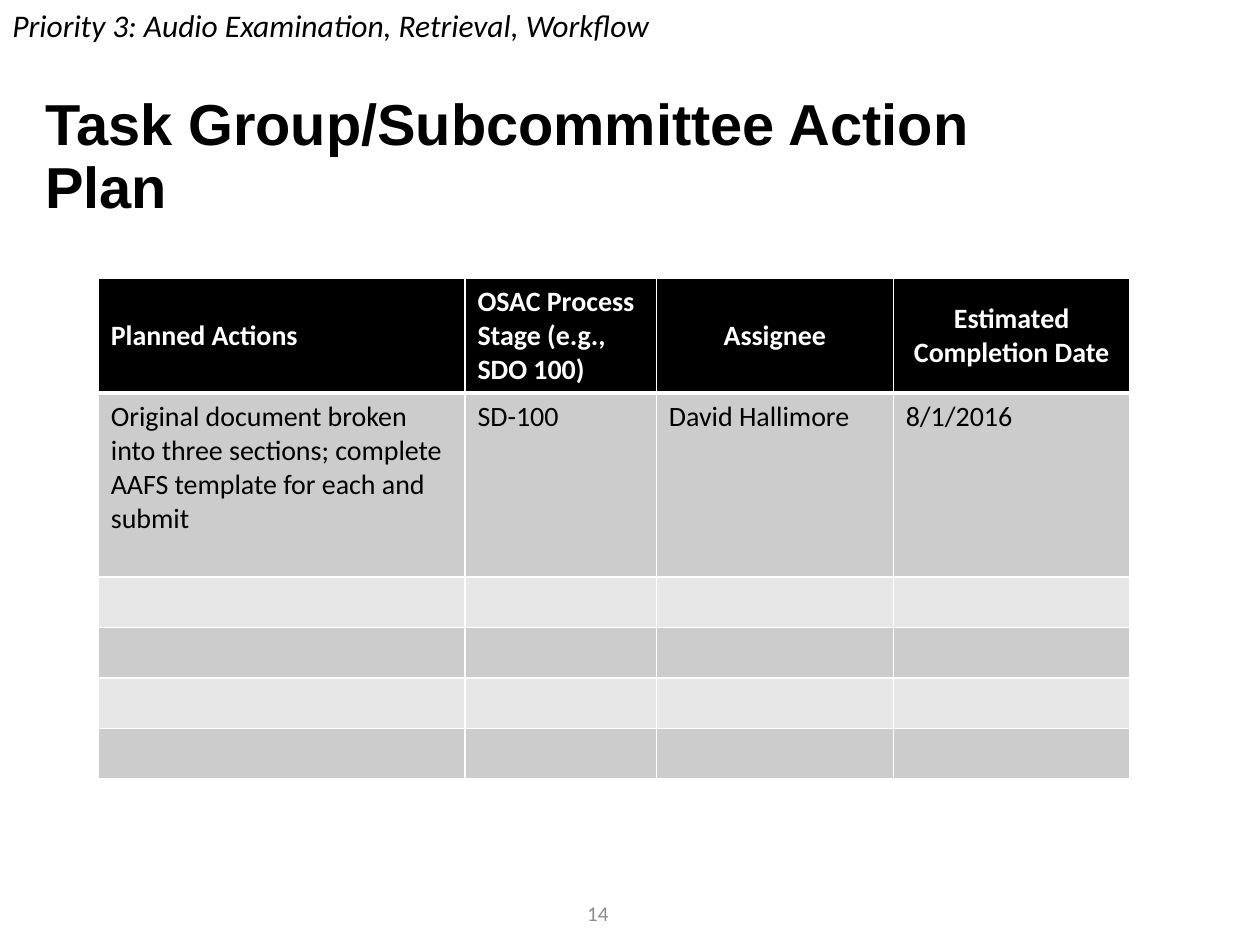
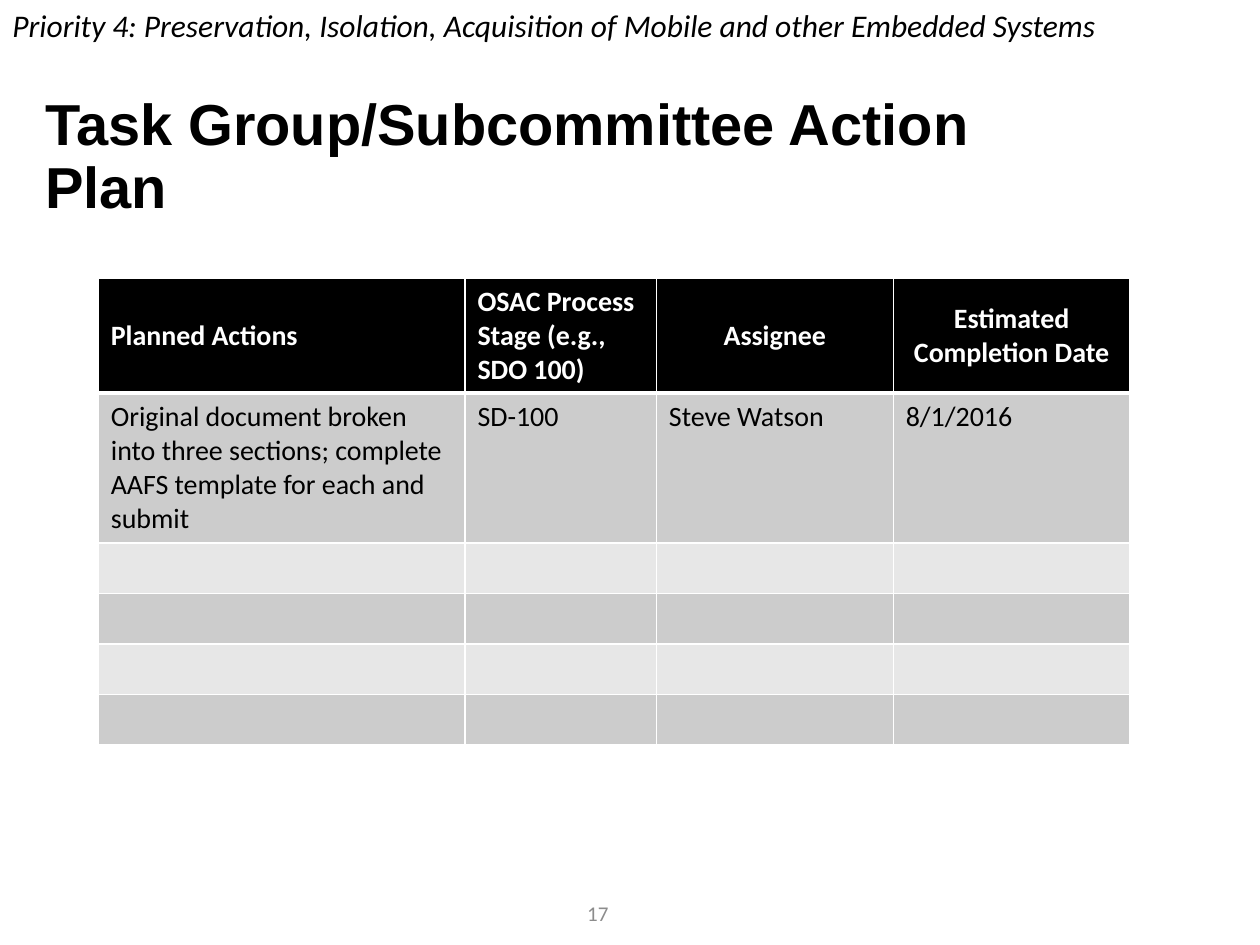
import pptx
import pptx.dml.color
import pptx.enum.text
import pptx.oxml
import pptx.oxml.ns
import pptx.util

GRID_COLUMNS, GRID_ROWS = 100, 75
UNIT = pptx.util.Inches(0.1)

BLACK, WHITE, GREY = "000000", "FFFFFF", "8C8C8C"
BANDS = ["CCCCCC", "E7E7E7"]
LEFT, CENTER = pptx.enum.text.PP_ALIGN.LEFT, pptx.enum.text.PP_ALIGN.CENTER
TOP, MIDDLE = pptx.enum.text.MSO_ANCHOR.TOP, pptx.enum.text.MSO_ANCHOR.MIDDLE

STYLES = {
    "title": {"name": "Arial", "size": 33, "bold": True, "color": BLACK},
    "priority": {"name": "Calibri", "size": 18, "italic": True, "color": BLACK},
    "number": {"name": "Calibri", "size": 12, "color": GREY},
    "header": {"name": "Calibri", "size": 16, "bold": True, "color": WHITE},
    "body": {"name": "Calibri", "size": 16, "bold": False, "color": BLACK},
}

TITLE_BOX = (2.6, 5.3, 86.2, 14.5)
NUMBER_BOX = (36.2, 70.5, 22.5, 4)
TABLE_CORNER = (7.8, 22.1)
COLUMN_WIDTHS = [29.1, 15.2, 18.8, 18.8]
HEADER_HEIGHT, EMPTY_HEIGHT, EMPTY_ROWS = 9.1, 4, 4
HEADINGS = [
    ("Planned Actions", LEFT),
    ("OSAC Process Stage (e.g., SDO 100)", LEFT),
    ("Assignee", CENTER),
    ("Estimated Completion Date", CENTER),
]
ACTION = "Original document broken into three sections; complete AAFS template for each and submit"

PAGES = [
    {"priority": "Priority 3: Audio Examination, Retrieval, Workflow",
     "priority_width": 82.6, "assignee": "David Hallimore",
     "action_height": 14.6, "number": "14"},
    {"priority": "Priority 4: Preservation, Isolation, Acquisition of Mobile and other Embedded Systems",
     "priority_width": 89.6, "assignee": "Steve Watson",
     "action_height": 11.9, "number": "17"},
]


def color(hex_string):
    return pptx.dml.color.RGBColor.from_string(hex_string)


def units(*lengths):
    return [round(length * UNIT) for length in lengths]


def write(frame, text, style, align=LEFT, line_spacing=None):
    para = frame.paragraphs[0]
    para.alignment = align
    para.line_spacing = line_spacing
    span = para.add_run()
    span.text = text
    for key, value in STYLES[style].items():
        if key == "color":
            span.font.color.rgb = color(value)
        else:
            setattr(span.font, key, pptx.util.Pt(value) if key == "size" else value)


def add_text(page, box, text, style, align=LEFT, anchor=TOP, line_spacing=None):
    frame = page.shapes.add_textbox(*units(*box)).text_frame
    frame.word_wrap = True
    frame.vertical_anchor = anchor
    write(frame, text, style, align, line_spacing)


def style_cell(cell, fill, borders):
    properties = cell._tc.get_or_add_tcPr()
    for side in "LRTB":
        width = pptx.util.Pt(borders.get(side, 1))
        properties.append(pptx.oxml.parse_xml(
            f'<a:ln{side} {pptx.oxml.ns.nsdecls("a")} w="{width}"><a:solidFill>'
            f'<a:srgbClr val="{WHITE}"/></a:solidFill></a:ln{side}>'))
    cell.fill.solid()
    cell.fill.fore_color.rgb = color(fill)


def add_action_table(page, corner, assignee, action_height):
    heights = [HEADER_HEIGHT, action_height] + [EMPTY_HEIGHT] * EMPTY_ROWS
    box = (*corner, sum(COLUMN_WIDTHS), sum(heights))
    table = page.shapes.add_table(len(heights), len(COLUMN_WIDTHS), *units(*box)).table
    table.horz_banding = False
    for column, width in zip(table.columns, units(*COLUMN_WIDTHS)):
        column.width = width
    for index, (row, height) in enumerate(zip(table.rows, units(*heights))):
        row.height = height
        fill = BANDS[(index - 1) % 2] if index else BLACK
        borders = {0: {"B": 3}, 1: {"T": 3}}.get(index, {})
        for cell in row.cells:
            style_cell(cell, fill, borders)
    for cell, (heading, align) in zip(table.rows[0].cells, HEADINGS):
        cell.vertical_anchor = MIDDLE
        write(cell.text_frame, heading, "header", align)
    for cell, text in zip(table.rows[1].cells, [ACTION, "SD-100", assignee, "8/1/2016"]):
        write(cell.text_frame, text, "body")


def add_plan_page(deck, plan):
    page = deck.slides.add_slide(deck.slide_layouts[6])
    add_text(page, TITLE_BOX, "Task Group/Subcommittee Action Plan", "title",
             anchor=MIDDLE, line_spacing=0.9)
    add_action_table(page, TABLE_CORNER, plan["assignee"], plan["action_height"])
    add_text(page, (0, 0, plan["priority_width"], 4), plan["priority"], "priority")
    add_text(page, NUMBER_BOX, plan["number"], "number", CENTER, MIDDLE)


def main():
    deck = pptx.Presentation()
    deck.slide_width, deck.slide_height = units(GRID_COLUMNS, GRID_ROWS)
    for plan in PAGES:
        add_plan_page(deck, plan)
    deck.save("out.pptx")


if __name__ == "__main__":
    main()
